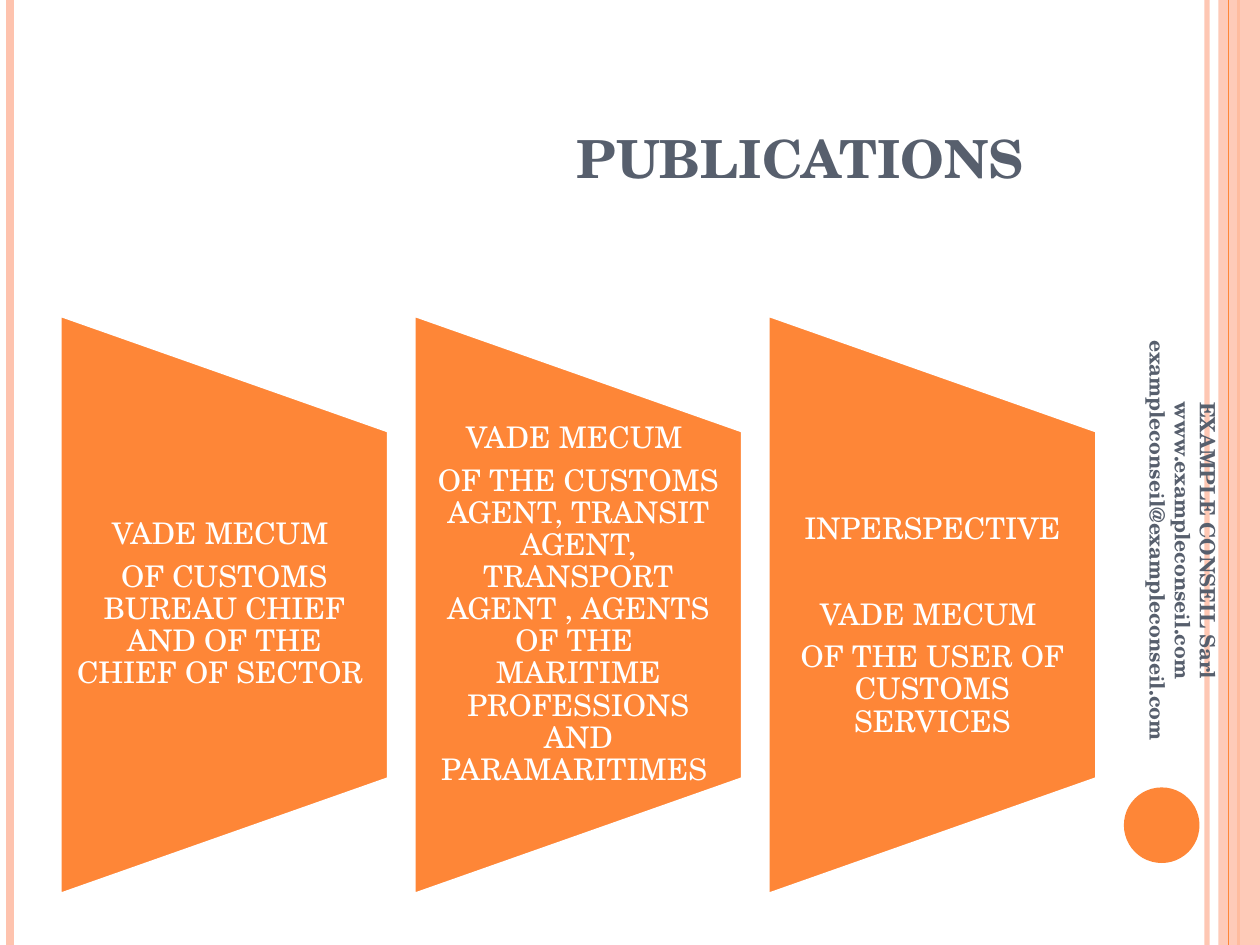
from dataclasses import dataclass, field

from lxml.etree import SubElement
from pptx import Presentation
from pptx.dml.color import RGBColor
from pptx.enum.shapes import MSO_CONNECTOR, MSO_SHAPE
from pptx.enum.text import MSO_ANCHOR, PP_ALIGN
from pptx.oxml.ns import qn
from pptx.util import Emu, Inches, Pt

WIDE, HIGH = Inches(10), Inches(7.5)
ORANGE, PEACH, SLATE, WHITE = "FE8637", "FEC3AE", "575F6D", "FFFFFF"
FACE = "TeX Gyre Schola"


@dataclass
class Box:
    mid: float
    row: float
    wide: float
    high: float
    turn: int = 0


@dataclass
class Rule:
    col: float
    size: float
    color: str
    alpha: int = 100


@dataclass
class Text:
    box: Box
    lines: list[str]
    font: dict
    para: dict = field(default_factory=dict)
    frame: dict = field(default_factory=dict)
    gaps: dict[int, float] = field(default_factory=dict)
    indent: float = 0


def across(pct: float) -> Emu:
    return Emu(round(WIDE * pct / 100))


def down(pct: float) -> Emu:
    return Emu(round(HIGH * pct / 100))


def place(box: Box) -> tuple:
    return (across(box.mid - box.wide / 2), down(box.row - box.high / 2),
            across(box.wide), down(box.high))


def apply(item, values: dict) -> None:
    for name, value in values.items():
        setattr(item, name, value)


def paint(fill, color: str, alpha: int = 100) -> None:
    fill.solid()
    fill.fore_color.rgb = RGBColor.from_string(color)
    if alpha < 100:
        tone = fill._xPr.find(".//" + qn("a:srgbClr"))
        SubElement(tone, qn("a:alpha")).set("val", str(alpha * 1000))


def draw_rule(slide, rule: Rule) -> None:
    left = across(rule.col)
    line = slide.shapes.add_connector(MSO_CONNECTOR.STRAIGHT, left, 0, left, HIGH)
    line.line.width = Pt(rule.size)
    paint(line.line.fill, rule.color, rule.alpha)
    SubElement(line._element.spPr, qn("a:effectLst"))


def draw_shape(slide, kind: MSO_SHAPE, box: Box, color: str,
               alpha: int = 100, edge: float = 0) -> None:
    shape = slide.shapes.add_shape(kind, *place(box))
    shape.rotation = box.turn
    shape.shadow.inherit = False
    paint(shape.fill, color, alpha)
    if edge:
        paint(shape.line.fill, WHITE)
        shape.line.width = Pt(edge)
    else:
        shape.line.fill.background()


def draw_text(slide, text: Text, color: str) -> None:
    shape = slide.shapes.add_textbox(*place(text.box))
    shape.rotation = text.box.turn
    frame = shape.text_frame
    apply(frame, {"word_wrap": True, "vertical_anchor": MSO_ANCHOR.MIDDLE} | text.frame)
    for i, words in enumerate(text.lines):
        para = frame.add_paragraph() if i else frame.paragraphs[0]
        para.text = words
        apply(para, {"alignment": PP_ALIGN.CENTER} | text.para)
        if i in text.gaps:
            para.space_before = Pt(text.gaps[i])
        if text.indent:
            para._p.get_or_add_pPr().set("marL", str(across(text.indent)))
        for run in para.runs:
            apply(run.font, {"name": FACE} | text.font)
            run.font.color.rgb = RGBColor.from_string(color)


RULES = [
    Rule(95.8, 3, PEACH, 93),
    Rule(0.8, 4.5, PEACH),
    Rule(98.3, 1.5, ORANGE),
    Rule(97.5, 0.75, ORANGE),
]
BAND = Box(98.35, 50, 3.3, 100)
DOT = Box(92.2, 87.33, 6, 8)
TITLE = Text(Box(45.85, 12.33, 81.7, 16.67), ["PUBLICATIONS"],
             {"size": Pt(30), "bold": True},
             frame={"vertical_anchor": MSO_ANCHOR.BOTTOM}, indent=35.3)
CONTACT = Text(Box(93.9, 57.2, 35, 5.33, 90),
               ["EXAMPLE CONSEIL Sarl\vwww.exampleconseil.com\v"
                "exampleconseil@exampleconseil.com"],
               {"size": Pt(12), "bold": True})
BOOKS = [
    (["VADE MECUM ", "OF CUSTOMS BUREAU CHIEF AND OF THE CHIEF OF SECTOR "], 0, {}),
    (["VADE MECUM ", "OF THE CUSTOMS AGENT, TRANSIT AGENT, TRANSPORT AGENT , "
      "AGENTS OF THE \vMARITIME PROFESSIONS AND PARAMARITIMES "], 0, {}),
    (["INPERSPECTIVE", "VADE MECUM ", "OF THE USER OF CUSTOMS SERVICES"],
     0.34, {1: 24.5}),
]
FIRST, STEP, ROW = 17.8, 28.1, 64


def main() -> None:
    deck = Presentation()
    apply(deck, {"slide_width": WIDE, "slide_height": HIGH})
    slide = deck.slides.add_slide(deck.slide_layouts[6])
    for rule in RULES[:3]:
        draw_rule(slide, rule)
    draw_shape(slide, MSO_SHAPE.RECTANGLE, BAND, PEACH, 87)
    draw_rule(slide, RULES[3])
    draw_shape(slide, MSO_SHAPE.OVAL, DOT, ORANGE)
    draw_text(slide, TITLE, SLATE)
    for i, (lines, top, gaps) in enumerate(BOOKS):
        mid = FIRST + i * STEP
        draw_shape(slide, MSO_SHAPE.FLOWCHART_MANUAL_OPERATION,
                   Box(mid, ROW, 46, 34.8, 270), ORANGE, edge=2)
        frame = {"margin_left": Inches(0.12), "margin_right": Inches(0.12),
                 "margin_top": Inches(top), "margin_bottom": 0}
        draw_text(slide, Text(Box(mid, ROW, 26.1, 36.8), lines, {"size": Pt(17)},
                              {"line_spacing": 0.9, "space_after": Pt(6)},
                              frame, gaps), WHITE)
    draw_text(slide, CONTACT, SLATE)
    deck.save("out.pptx")


if __name__ == "__main__":
    main()
